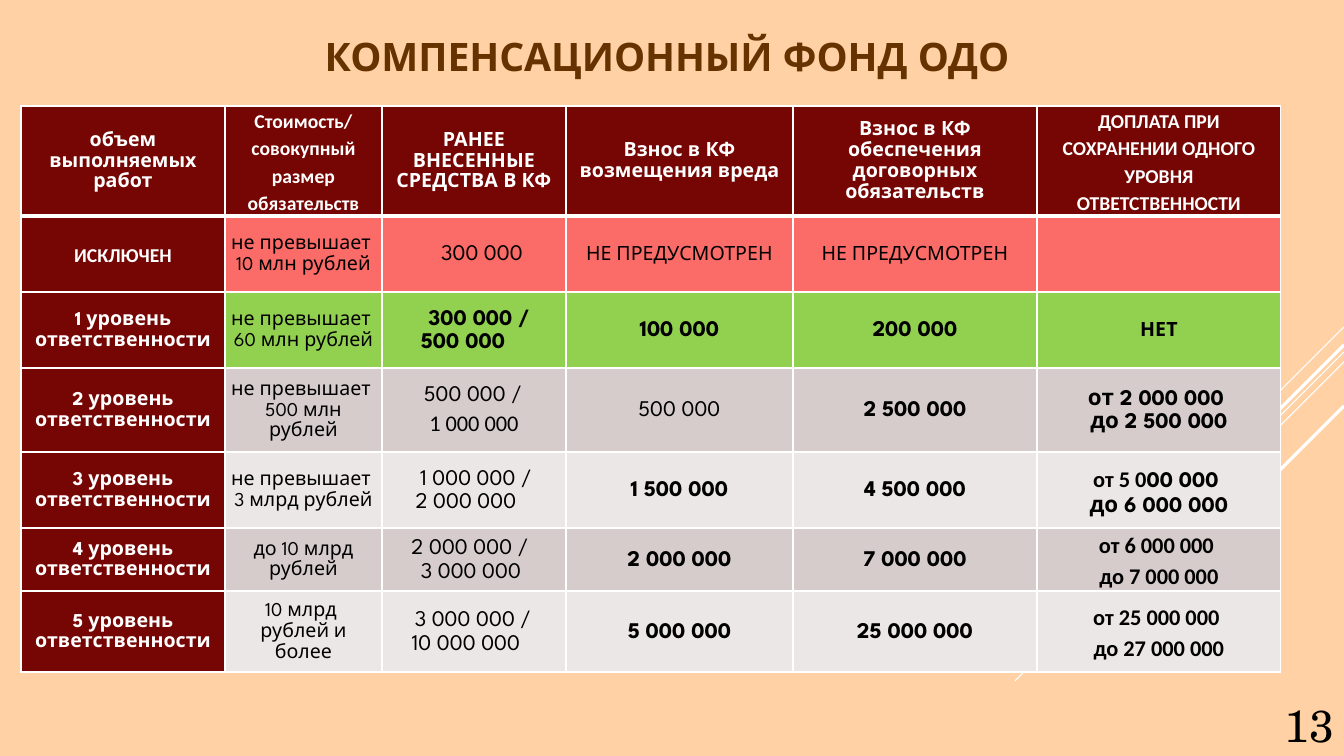
from dataclasses import dataclass, replace

from lxml import etree
from pptx import Presentation
from pptx.dml.color import RGBColor
from pptx.enum.shapes import MSO_CONNECTOR
from pptx.enum.text import MSO_ANCHOR, PP_ALIGN
from pptx.oxml.ns import qn
from pptx.util import Pt

MID, LOW = MSO_ANCHOR.MIDDLE, MSO_ANCHOR.BOTTOM
CENTER, RIGHT = PP_ALIGN.CENTER, PP_ALIGN.RIGHT
LINE = MSO_CONNECTOR.STRAIGHT

WIDE, HIGH = 1344, 756
SCALE = 12192000 / WIDE
INSET = 6  # side inset of table cells
SLACK = 22  # extra right inset of paid sums, so they can shift both ways
PAID = 2  # column of paid sums

HEX = {
    "back": "FFD1A4", "title": "663300", "white": "FFFFFF", "black": "000000",
    "wine": "760603", "red": "FB6B67", "green": "92D050",
    "dark": "D6CCCC", "light": "ECE7E7",
}
SANS, PLAIN, SERIF = "League Spartan", "Calibri", "TeX Gyre Schola"


@dataclass(frozen=True)
class Style:
    size: int
    face: str = SANS
    bold: bool = False
    ink: str = "black"


@dataclass(frozen=True)
class Run:
    text: str
    style: Style


@dataclass(frozen=True)
class Para:
    runs: tuple[Run, ...]
    shift: int = 0  # px right of the cell's middle


@dataclass(frozen=True)
class Ray:
    top: int
    span: int
    weight: float


@dataclass(frozen=True)
class Row:
    height: int
    fill: str
    cells: list[list[Para]]


HEAD = Style(14, bold=True, ink="white")
HEAD_PLAIN = replace(HEAD, face=PLAIN)
NOTE = Style(14)
SUM = Style(16)
BOLD = Style(16, bold=True)
BOLD_PLAIN = replace(BOLD, face=PLAIN)


def px(n: float) -> int:
    return round(n * SCALE)


def rgb(name: str) -> RGBColor:
    return RGBColor.from_string(HEX[name])


def say(style: Style, *lines: str) -> list[Para]:
    return [Para((Run(line, style),)) for line in lines]


def level(n: int) -> list[Para]:
    return say(HEAD, f"{n} уровень ответственности")


def paid(style: Style, *parts: tuple[str, int]) -> list[Para]:
    return [Para((Run(text, style),), shift) for text, shift in parts]


def add_run(para, run: Run) -> None:
    for i, text in enumerate(run.text.split("\n")):
        if i:
            para.add_line_break()
        part = para.add_run()
        part.text = text
        font, style = part.font, run.style
        font.size, font.name, font.bold = Pt(style.size), style.face, style.bold
        font.color.rgb = rgb(style.ink)


def add_ray(slide, ray: Ray) -> None:
    line = slide.shapes.add_connector(
        LINE, px(WIDE), px(ray.top), px(WIDE - ray.span), px(ray.top + ray.span))
    line.line.color.rgb = rgb("white")
    line.line.width = Pt(ray.weight)
    etree.SubElement(line._element.spPr, qn("a:effectLst"))


def add_edges(cell, base: int) -> None:
    props = cell._tc.get_or_add_tcPr()
    for side in "LRTB":
        width = base if side == "B" else 1
        edge = etree.SubElement(props, qn(f"a:ln{side}"), w=str(Pt(width)))
        fill = etree.SubElement(edge, qn("a:solidFill"))
        etree.SubElement(fill, qn("a:srgbClr"), val=HEX["white"])


def fill_cell(cell, paras: list[Para], fill: str, top: bool, slack: int) -> None:
    add_edges(cell, 3 if top else 1)
    cell.fill.solid()
    cell.fill.fore_color.rgb = rgb(fill)
    cell.vertical_anchor = MID
    cell.margin_left, cell.margin_right = px(INSET), px(INSET + slack)
    cell.margin_top = cell.margin_bottom = 0
    for i, item in enumerate(paras):
        para = cell.text_frame.add_paragraph() if i else cell.text_frame.paragraphs[0]
        para.alignment, para.line_spacing = CENTER, 1.15
        if slack:
            indent = px(slack + 2 * item.shift)
            para._p.get_or_add_pPr().set("marL", str(indent))
        for run in item.runs:
            add_run(para, run)


RAYS = [Ray(327, 101, 0.75), Ray(352, 329, 0.75), Ray(362, 209, 0.75),
        Ray(345, 193, 2.25), Ray(406, 140, 2.25)]
COLS = [204, 157, 184, 227, 244, 244]
ROWS = [
    Row(110, "wine", [
        say(HEAD, "объем выполняемых работ"),
        say(HEAD_PLAIN, "Стоимость/\nсовокупный размер обязательств"),
        say(HEAD, "РАНЕЕ ВНЕСЕННЫЕ", "СРЕДСТВА В КФ"),
        say(HEAD, "Взнос в КФ возмещения вреда"),
        say(HEAD, "Взнос в КФ обеспечения", "договорных обязательств"),
        say(HEAD_PLAIN, "ДОПЛАТА ПРИ СОХРАНЕНИИ ОДНОГО УРОВНЯ ОТВЕТСТВЕННОСТИ")]),
    Row(76, "red", [
        say(HEAD_PLAIN, "ИСКЛЮЧЕН"),
        say(NOTE, "не превышает \n10 млн рублей"),
        paid(SUM, ("300 000", 8)),
        say(NOTE, "НЕ ПРЕДУСМОТРЕН"),
        say(NOTE, "НЕ ПРЕДУСМОТРЕН"),
        []]),
    Row(76, "green", [
        level(1),
        say(NOTE, "не превышает \n60 млн рублей"),
        paid(BOLD, ("300 000 /", 5), ("500 000", -11)),
        say(BOLD, "100 000"),
        say(BOLD, "200 000"),
        say(replace(BOLD, size=14), "НЕТ")]),
    Row(84, "dark", [
        level(2),
        say(NOTE, "не превышает \n500 млн рублей"),
        paid(SUM, ("500 000 /", -1)) + paid(replace(SUM, face=PLAIN), ("1 000 000", 0)),
        say(SUM, "500 000"),
        say(BOLD, "2 500 000"),
        say(BOLD, "от 2 000 000 ", "до 2 500 000")]),
    Row(76, "light", [
        level(3),
        say(NOTE, "не превышает \n3 млрд рублей"),
        paid(SUM, ("1 000 000 /", 2), ("2 000 000", -8)),
        say(BOLD, "1 500 000"),
        say(BOLD, "4 500 000"),
        [Para((Run("от 5 0", BOLD_PLAIN), Run("00 000 \nдо 6 000 000", BOLD)))]]),
    Row(63, "dark", [
        level(4),
        say(NOTE, "до 10 млрд рублей"),
        paid(SUM, ("2 000 000 /", -4), ("3 000 000", -3)),
        say(BOLD, "2 000 000"),
        say(BOLD, "7 000 000"),
        say(BOLD_PLAIN, "от 6 000 000 \nдо 7 000 000")]),
    Row(63, "light", [
        level(5),
        say(NOTE, "10 млрд ", "рублей и более"),
        paid(SUM, ("3 000 000 /", -1), ("10 000 000", -8)),
        say(BOLD, "5 000 000"),
        say(BOLD, "25 000 000"),
        say(BOLD_PLAIN, "от 25 000 000 \nдо 27 000 000")]),
]


def main() -> None:
    deck = Presentation()
    deck.slide_width, deck.slide_height = px(WIDE), px(HIGH)
    slide = deck.slides.add_slide(deck.slide_layouts[5])
    slide.background.fill.solid()
    slide.background.fill.fore_color.rgb = rgb("back")

    # Rays at the right edge
    for ray in RAYS:
        add_ray(slide, ray)

    # Title
    title = slide.shapes.title
    title.left, title.top, title.width, title.height = px(10), px(17), px(1314), px(78)
    title.text_frame.vertical_anchor = MID
    para = title.text_frame.paragraphs[0]
    para.alignment = CENTER
    add_run(para, Run("КОМПЕНСАЦИОННЫЙ ФОНД ОДО", Style(28, bold=True, ink="title")))

    # Page number
    page = slide.shapes.add_textbox(px(1218), px(682), px(126), px(74)).text_frame
    page.word_wrap, page.vertical_anchor = True, LOW
    page.paragraphs[0].alignment = RIGHT
    add_run(page.paragraphs[0], Run("13", Style(32, SERIF)))

    # Table of levels
    table = slide.shapes.add_table(
        len(ROWS), len(COLS), px(21), px(106),
        px(sum(COLS)), px(sum(row.height for row in ROWS))).table
    table.first_row = table.horz_banding = False
    for c, width in enumerate(COLS):
        table.columns[c].width = px(width)
    for r, row in enumerate(ROWS):
        table.rows[r].height = px(row.height)
        for c, paras in enumerate(row.cells):
            fill = row.fill if c else "wine"
            slack = SLACK if r and c == PAID else 0
            fill_cell(table.cell(r, c), paras, fill, r == 0, slack)

    deck.save("out.pptx")


if __name__ == "__main__":
    main()
